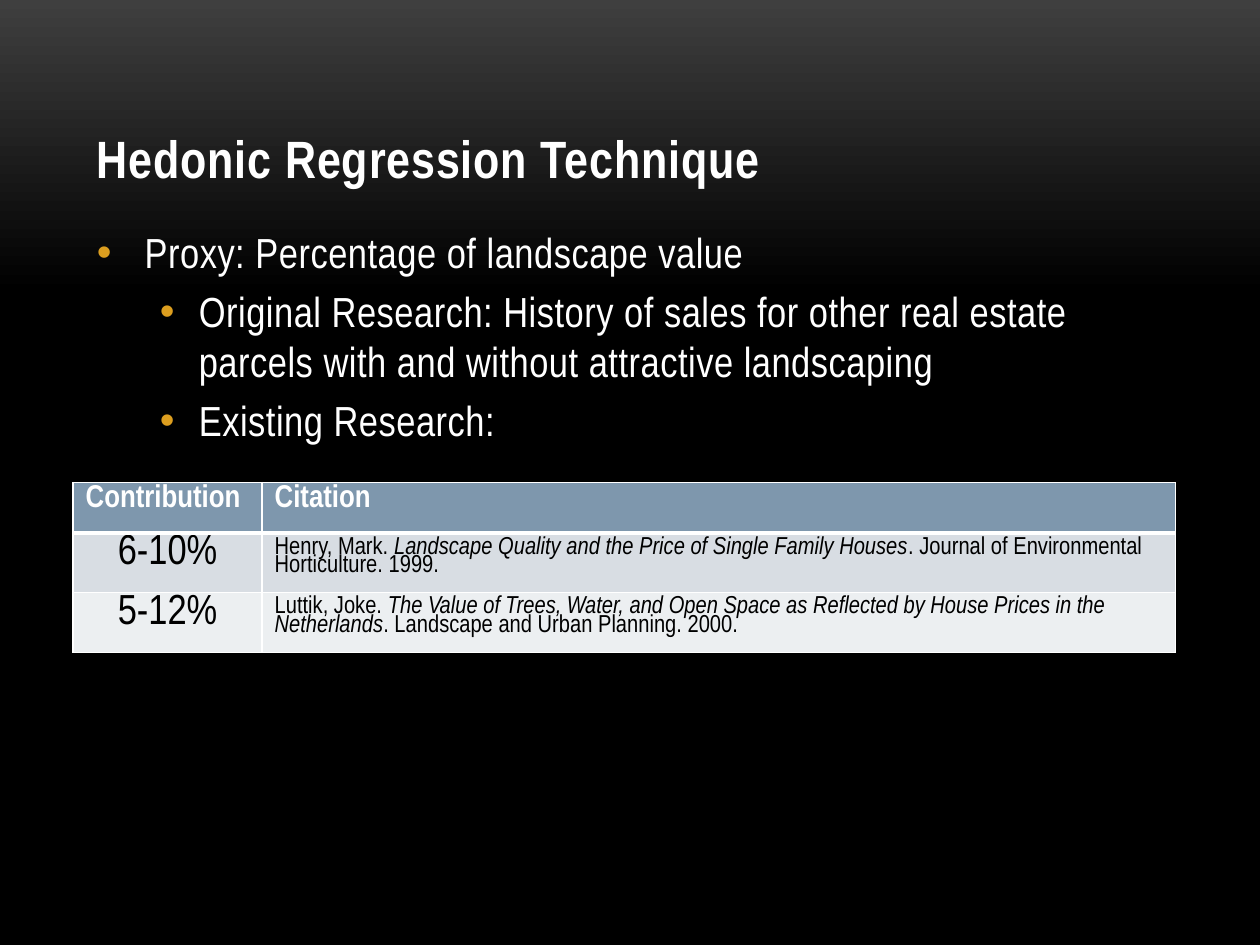
from lxml.etree import SubElement
from pptx import Presentation
from pptx.dml.color import RGBColor
from pptx.enum.text import MSO_ANCHOR, PP_ALIGN
from pptx.oxml.ns import qn
from pptx.util import Inches, Pt

FONT = "Arial Narrow"
WHITE, BLACK, GOLD = "FFFFFF", "000000", "DC9E1F"
BACKGROUND = [(0, "3F3F3F"), (0.31, BLACK)]
ROW_FILLS = ["7E97AD", "D8DDE3", "ECEFF1"]

TITLE = "Hedonic Regression Technique"
BULLETS = [  # level, text
    (0, "Proxy: Percentage of landscape value"),
    (1, "Original Research: History of sales for other real estate parcels "
        "with and without attractive landscaping"),
    (1, "Existing Research:"),
]
INDENTS = [(0.38, -0.38), (0.81, -0.31)]  # left margin, first line

HEADERS = ["Contribution", "Citation"]
STUDIES = [  # contribution, author, work, publication
    ("6-10%", "Henry, Mark. ",
     "Landscape Quality and the Price of Single Family Houses",
     ". Journal of Environmental Horticulture. 1999."),
    ("5-12%", "Luttik, Joke. ",
     "The Value of Trees, Water, and Open Space as Reflected by House Prices "
     "in the Netherlands",
     ". Landscape and Urban Planning. 2000."),
]
COLUMN_WIDTHS = [1.5, 7.25]
ROW_HEIGHTS = [0.4, 0.47, 0.47]


def rgb(color):
    return RGBColor.from_string(color)


def add_run(p, text, size, color=WHITE, spacing=0, **format_values):
    r = p.add_run()
    r.text = text
    for name, value in {"name": FONT, "size": Pt(size), **format_values}.items():
        setattr(r.font, name, value)
    r.font.color.rgb = rgb(color)
    if spacing:
        r.font._element.set("spc", str(round(spacing * 100)))


def add_text_frame(slide, left, top, width, height, anchor):
    box = slide.shapes.add_textbox(*map(Inches, (left, top, width, height)))
    tf = box.text_frame
    tf.word_wrap = True
    tf.vertical_anchor = anchor
    return tf


def set_bullet(p, level):
    p.level = level
    pPr = p._p.get_or_add_pPr()
    for name, value in zip(("marL", "indent"), INDENTS[level]):
        pPr.set(name, str(Inches(value)))
    color = SubElement(pPr, qn("a:buClr"))
    SubElement(color, qn("a:srgbClr"), val=GOLD)
    SubElement(pPr, qn("a:buFont"), typeface="Arial")
    SubElement(pPr, qn("a:buChar"), char="•")


def set_borders(cell, **widths):
    """Draw white borders; they must precede the fill in the cell's XML."""
    tcPr = cell._tc.get_or_add_tcPr()
    for side, width in widths.items():
        line = SubElement(tcPr, qn(f"a:ln{side}"), w=str(Pt(width)))
        fill = SubElement(line, qn("a:solidFill"))
        SubElement(fill, qn("a:srgbClr"), val=WHITE)


def add_studies_table(slide):
    table = slide.shapes.add_table(
        len(ROW_HEIGHTS), len(COLUMN_WIDTHS), Inches(0.58), Inches(3.83),
        Inches(sum(COLUMN_WIDTHS)), Inches(sum(ROW_HEIGHTS))).table
    for column, width in zip(table.columns, COLUMN_WIDTHS):
        column.width = Inches(width)

    for i, (row, height) in enumerate(zip(table.rows, ROW_HEIGHTS)):
        row.height = Inches(height)
        for cell in row.cells:
            set_borders(cell, L=1, R=1, T=3 if i == 1 else 1, B=3 if i == 0 else 1)
            cell.fill.solid()
            cell.fill.fore_color.rgb = rgb(ROW_FILLS[i])
            cell.text_frame.paragraphs[0].line_spacing = 0.8

    for column, header in enumerate(HEADERS):
        p = table.cell(0, column).text_frame.paragraphs[0]
        add_run(p, header, 18, bold=True)
    for i, (contribution, author, work, publication) in enumerate(STUDIES, 1):
        p = table.cell(i, 0).text_frame.paragraphs[0]
        p.alignment = PP_ALIGN.CENTER
        add_run(p, contribution, 24, BLACK, bold=False)
        p = table.cell(i, 1).text_frame.paragraphs[0]
        for text, italic in ((author, False), (work, True), (publication, False)):
            add_run(p, text, 14, BLACK, bold=False, italic=italic)


def main():
    prs = Presentation()
    prs.slide_width, prs.slide_height = Inches(10), Inches(7.5)
    slide = prs.slides.add_slide(prs.slide_layouts[6])

    fill = slide.background.fill
    fill.gradient()
    fill.gradient_angle = 270
    for stop, (position, color) in zip(fill.gradient_stops, BACKGROUND):
        stop.position = position
        stop.color.rgb = rgb(color)

    tf = add_text_frame(slide, 0.67, 0.3, 8.67, 1.25, MSO_ANCHOR.BOTTOM)
    add_run(tf.paragraphs[0], TITLE, 30, spacing=0.5, bold=True)

    tf = add_text_frame(slide, 0.67, 1.75, 8.67, 4.5, MSO_ANCHOR.TOP)
    for i, (level, text) in enumerate(BULLETS):
        p = tf.add_paragraph() if i else tf.paragraphs[0]
        if i:
            p.space_before = Pt(4.8)
        set_bullet(p, level)
        add_run(p, text, 24, spacing=0.3)

    add_studies_table(slide)
    prs.save("out.pptx")


if __name__ == "__main__":
    main()
